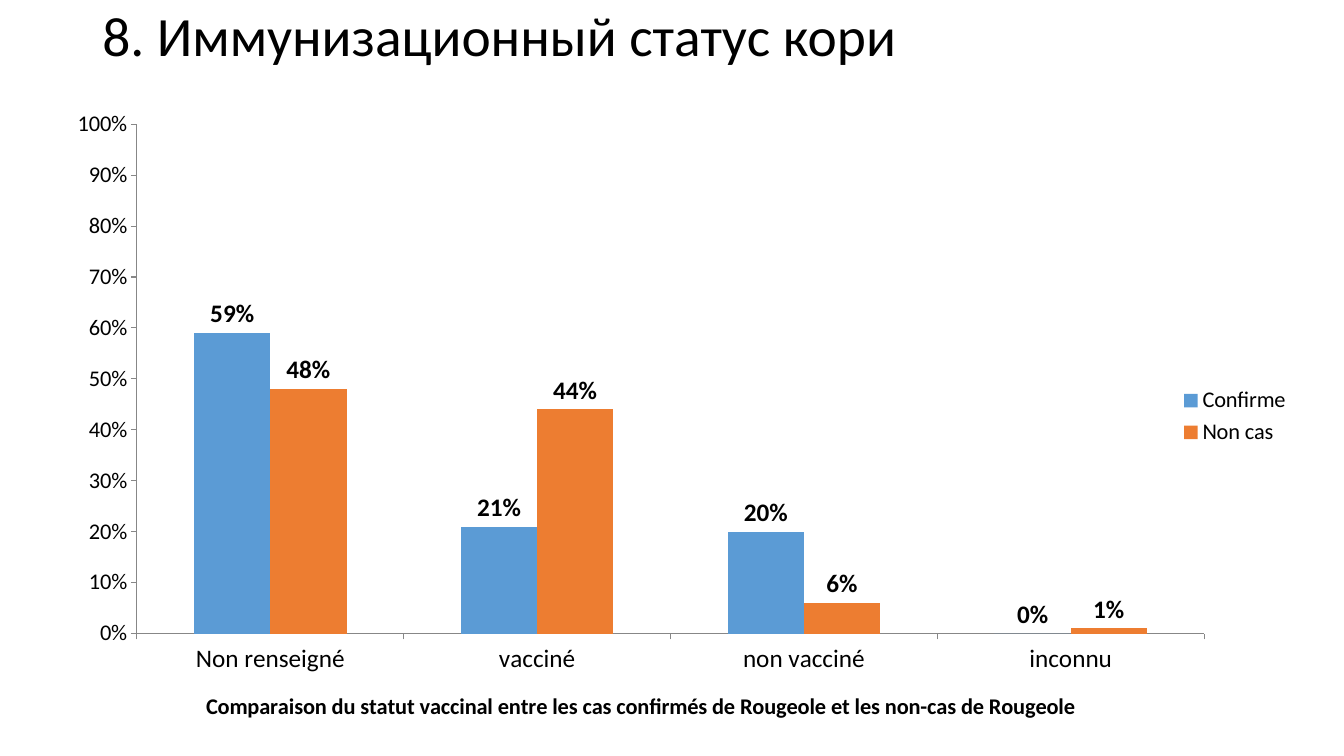
from dataclasses import dataclass

from lxml.etree import SubElement as Sub
from pptx import Presentation
from pptx.chart.chart import Chart
from pptx.chart.data import CategoryChartData as Data
from pptx.dml.color import RGBColor as RGB
from pptx.enum.chart import XL_CHART_TYPE as Kind
from pptx.enum.chart import XL_LABEL_POSITION as Spot
from pptx.enum.chart import XL_LEGEND_POSITION as Side
from pptx.enum.chart import XL_TICK_MARK as Tick
from pptx.enum.text import MSO_ANCHOR as Anchor
from pptx.oxml.ns import qn
from pptx.slide import Slide
from pptx.util import Pt


@dataclass(frozen=True)
class Theme:
    font: str = "Calibri"
    ink: RGB = RGB(0, 0, 0)
    axis: RGB = RGB(0x87, 0x87, 0x87)
    blue: RGB = RGB(0x5B, 0x9B, 0xD5)
    orange: RGB = RGB(0xED, 0x7D, 0x31)
    head: float = 39.6
    label: float = 18
    small: float = 16
    base: float = 10


@dataclass(frozen=True)
class Box:
    left: float
    top: float
    width: float
    height: float

    def place(self) -> tuple[Pt, Pt, Pt, Pt]:
        return Pt(self.left), Pt(self.top), Pt(self.width), Pt(self.height)


@dataclass(frozen=True)
class Group:
    name: str
    values: tuple[float, ...]
    color: RGB


THEME = Theme()
STATUS = ("Non renseigné", "vacciné", "non vacciné", "inconnu")
GROUPS = (
    Group("Confirme", (0.59, 0.21, 0.2, 0), THEME.blue),
    Group("Non cas", (0.48, 0.44, 0.06, 0.01), THEME.orange),
)
CAPTION = ("Comparaison du statut vaccinal entre les cas confirmés "
           "de Rougeole et les non-cas de Rougeole")
PERCENT = "0%"


def style(font, size: float, bold: bool = False) -> None:
    font.name = THEME.font
    font.size = Pt(size)
    font.bold = bold
    font.color.rgb = THEME.ink


def add_title(slide: Slide, text: str, box: Box) -> None:
    frame = slide.shapes.add_textbox(*box.place()).text_frame
    frame.word_wrap = True
    frame.vertical_anchor = Anchor.TOP
    frame.margin_top = frame.margin_bottom = Pt(0)
    line = frame.paragraphs[0]
    line.text = text
    line.line_spacing = 0.9
    style(line.font, THEME.head)


def fix_plot(chart: Chart, area: dict[str, float]) -> None:
    """Pin the inner plot area to fractions of the chart."""
    plot = chart.element.find(".//" + qn("c:plotArea"))
    layout = plot.find(qn("c:layout"))
    if layout is None:
        layout = plot.makeelement(qn("c:layout"))
        plot.insert(0, layout)
    manual = Sub(layout, qn("c:manualLayout"))
    rules = {"layoutTarget": "inner", "xMode": "edge", "yMode": "edge", **area}
    for tag, value in rules.items():
        Sub(manual, qn("c:" + tag)).set("val", str(value))


def style_axes(chart: Chart) -> None:
    cats, vals = chart.category_axis, chart.value_axis
    for axis, size in ((cats, THEME.label), (vals, THEME.small)):
        axis.has_major_gridlines = False
        axis.major_tick_mark = Tick.OUTSIDE
        axis.minor_tick_mark = Tick.NONE
        axis.format.line.color.rgb = THEME.axis
        axis.format.line.width = Pt(0.75)
        style(axis.tick_labels.font, size)
    vals.minimum_scale, vals.maximum_scale, vals.major_unit = 0, 1, 0.1
    vals.tick_labels.number_format = PERCENT
    vals.tick_labels.number_format_is_linked = False
    # Caption under the categories
    line = cats.axis_title.text_frame.paragraphs[0]
    line.text = CAPTION
    style(line.font, THEME.small, bold=True)


def style_bars(chart: Chart) -> None:
    plot = chart.plots[0]
    plot.gap_width = 150
    plot.overlap = 0
    plot.vary_by_categories = False
    for group, bars in zip(GROUPS, plot.series):
        bars.format.fill.solid()
        bars.format.fill.fore_color.rgb = group.color
        bars.invert_if_negative = False
        labels = bars.data_labels
        labels.show_value = True
        labels.position = Spot.OUTSIDE_END
        labels.number_format = PERCENT
        labels.number_format_is_linked = False
        style(labels.font, THEME.label, bold=True)


def add_bars(slide: Slide, box: Box) -> None:
    data = Data(number_format=PERCENT)
    data.categories = STATUS
    for group in GROUPS:
        data.add_series(group.name, group.values)
    chart = slide.shapes.add_chart(
        Kind.COLUMN_CLUSTERED, *box.place(), data).chart
    chart.has_title = False
    style(chart.font, THEME.base)
    style_axes(chart)
    style_bars(chart)
    fix_plot(chart, {"x": 0.064, "y": 0.033, "w": 0.858, "h": 0.814})
    # Legend at the right
    chart.has_legend = True
    chart.legend.position = Side.RIGHT
    chart.legend.include_in_layout = False
    style(chart.legend.font, THEME.small)


def main() -> None:
    deck = Presentation()
    deck.slide_width, deck.slide_height = Pt(960), Pt(540)
    slide = deck.slides.add_slide(deck.slide_layouts[6])
    add_bars(slide, Box(41, 74, 888.5, 447))
    add_title(slide, "8. Иммунизационный статус кори", Box(66, 6.5, 828, 44))
    deck.save("out.pptx")


if __name__ == "__main__":
    main()
